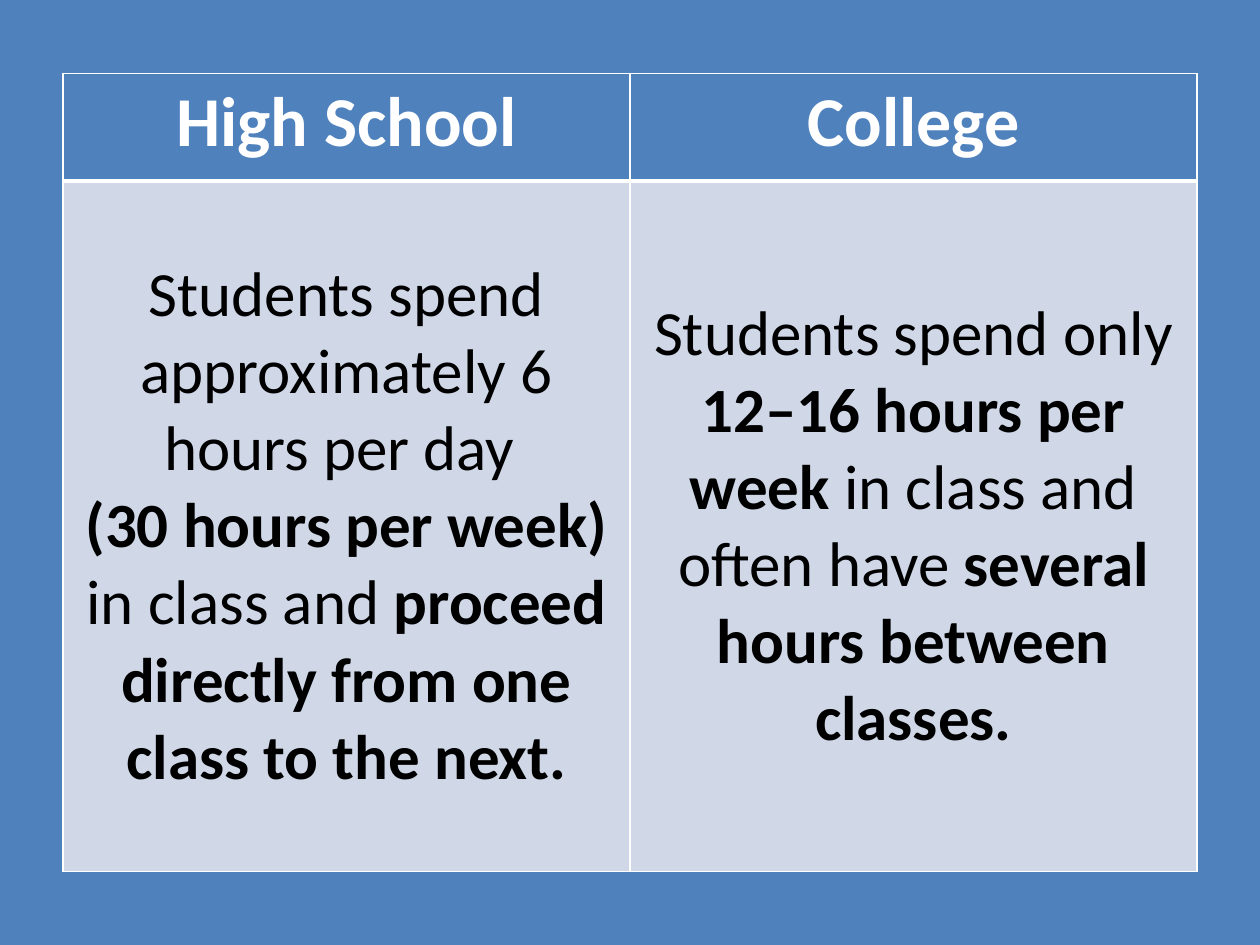
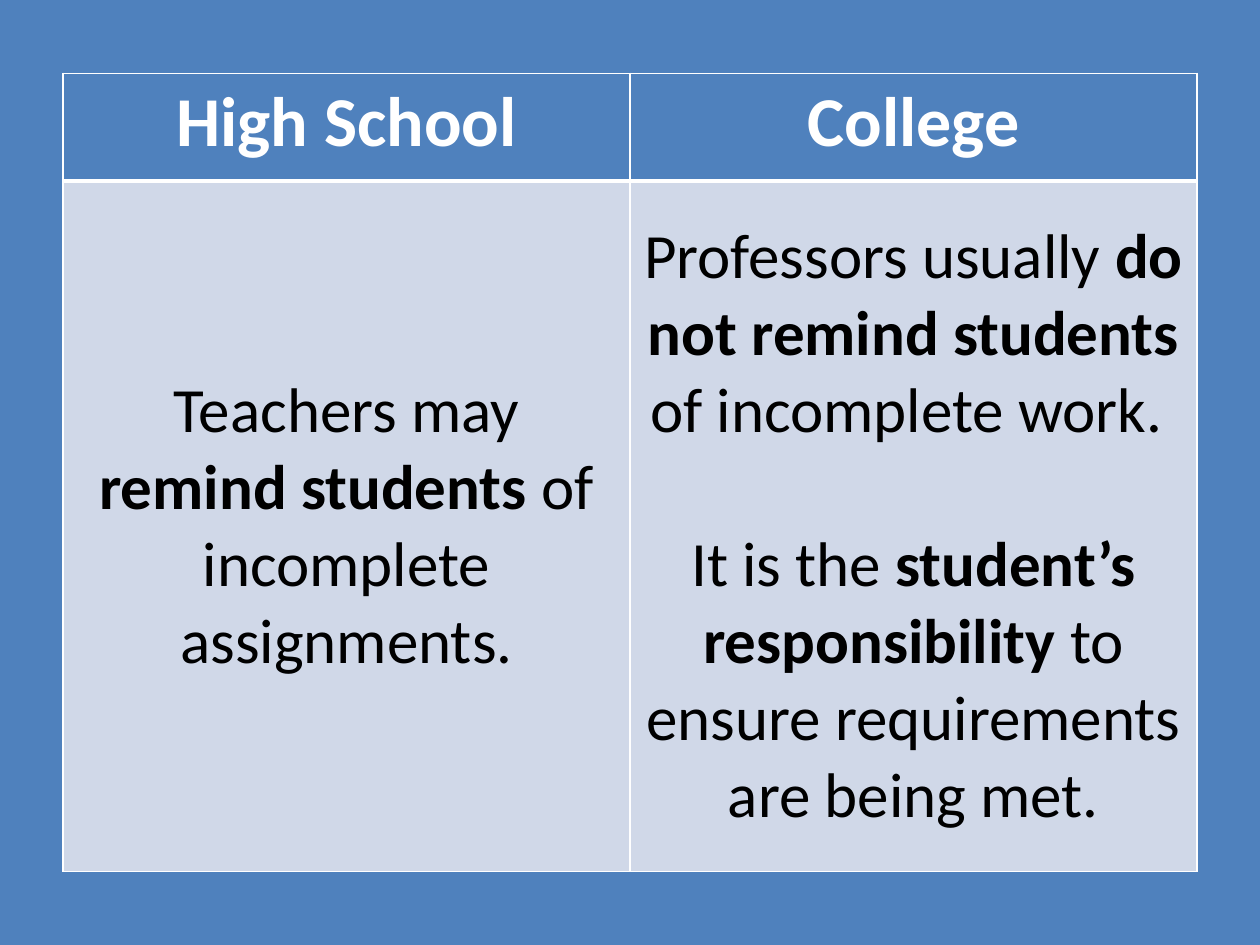
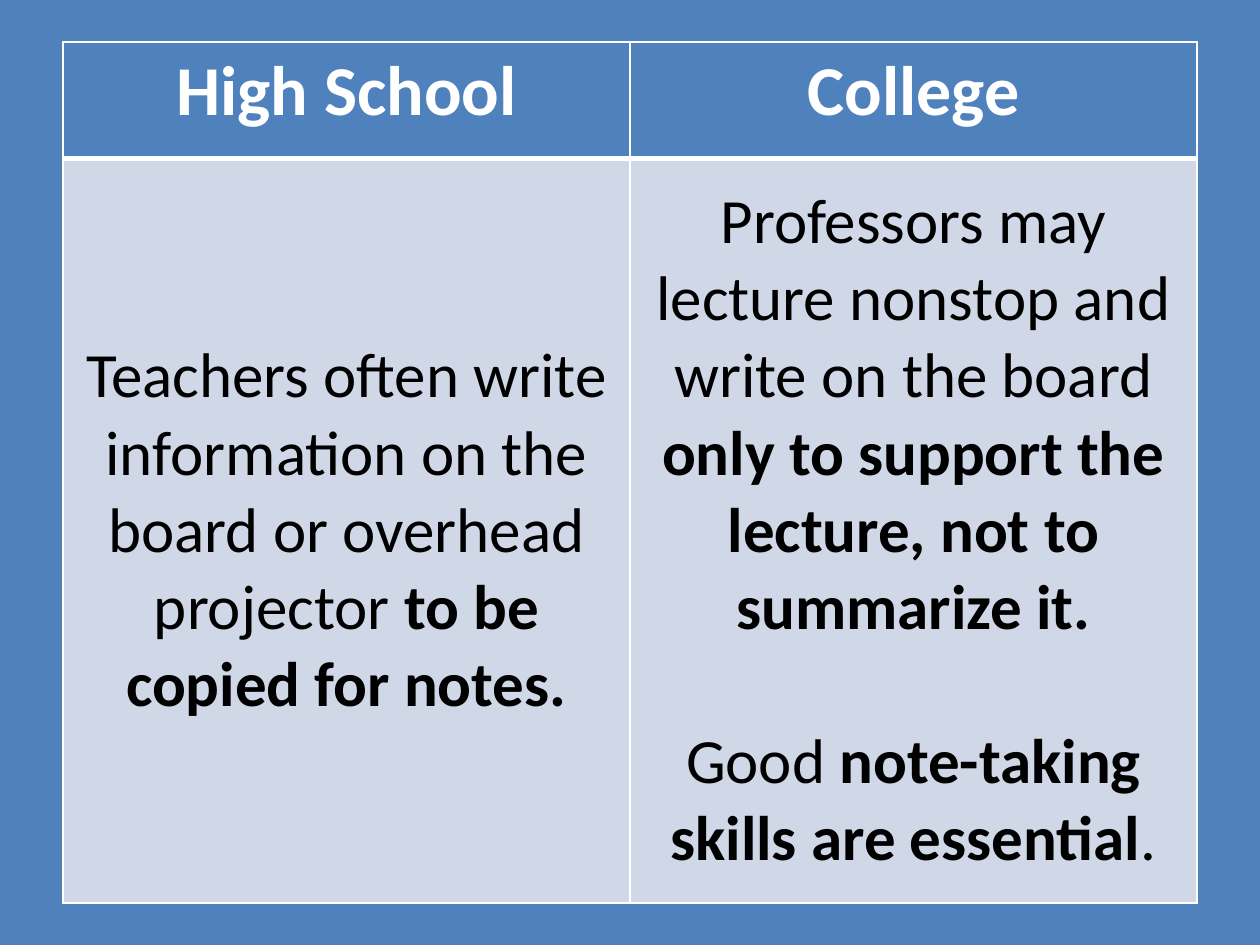
from dataclasses import dataclass

from lxml import etree
from pptx import Presentation
from pptx.dml.color import RGBColor
from pptx.enum.text import MSO_ANCHOR, PP_ALIGN
from pptx.oxml.ns import qn
from pptx.util import Cm, Pt

CENTER = PP_ALIGN.CENTER
TOP, MIDDLE = MSO_ANCHOR.TOP, MSO_ANCHOR.MIDDLE


@dataclass(frozen=True)
class Theme:
    font: str = "Calibri"
    blue: str = "4F81BD"
    pale: str = "D0D8E8"
    white: str = "FFFFFF"
    black: str = "000000"
    header_size: int = 40
    body_size: int = 36
    paragraph_gap: int = 44
    thin_line: int = 1
    thick_line: int = 3


THEME = Theme()
SLIDE_WIDTH, SLIDE_HEIGHT = Cm(25.4), Cm(19.05)
TABLE_WIDTH = Cm(22.86)
HEADER_SHARE = 0.135
HEADINGS = ("High School", "College")

# Each slide: table height, then the paragraphs of both columns; ** marks bold.
COMPARISONS = (
    (Cm(16.09), (
        ("Students spend approximately 6 hours per day ",
         "**(30 hours per week)** in class and "
         "**proceed directly from one class to the next.**"),
        ("Students spend only **12–16 hours per week** in class and often have "
         "**several hours between classes.**",),
    )),
    (Cm(16.09), (
        ("Teachers may **remind students **of incomplete assignments.",),
        ("Professors usually **do not remind students **of incomplete work. ",
         "It is the **student’s responsibility **to ensure requirements "
         "are being met."),
    )),
    (Cm(17.35), (
        ("Teachers often write information on the board or overhead projector "
         "**to be copied for notes.**",),
        ("Professors may lecture nonstop and write on the board "
         "**only to support the lecture, not to summarize it.**",
         "Good **note-taking skills are essential**."),
    )),
)


def set_borders(cell, **widths):
    """Draw white borders; widths are points keyed by side letter, in L, R, T, B order."""
    properties = cell._tc.get_or_add_tcPr()
    for side, width in widths.items():
        line = etree.SubElement(properties, qn(f"a:ln{side}"), w=str(Pt(width)))
        fill = etree.SubElement(line, qn("a:solidFill"))
        etree.SubElement(fill, qn("a:srgbClr"), val=THEME.white)


def add_marked_runs(paragraph, marked_text, size, color):
    """Split the text at ** so that every second part is bold."""
    paragraph.alignment = CENTER
    for index, part in enumerate(marked_text.split("**")):
        if not part:
            continue
        run = paragraph.add_run()
        run.text = part
        run.font.name = THEME.font
        run.font.size = Pt(size)
        run.font.bold = index % 2 == 1
        run.font.color.rgb = RGBColor.from_string(color)


def fill_cell(cell, paragraphs, fill, size, color, anchor):
    cell.fill.solid()
    cell.fill.fore_color.rgb = RGBColor.from_string(fill)
    cell.vertical_anchor = anchor
    text_frame = cell.text_frame
    for index, marked_text in enumerate(paragraphs):
        paragraph = text_frame.add_paragraph() if index else text_frame.paragraphs[0]
        add_marked_runs(paragraph, marked_text, size, color)


def add_comparison_table(slide, left, top, width, height, columns):
    table = slide.shapes.add_table(2, len(columns), left, top, width, height).table
    table.horz_banding = False
    header_height = round(height * HEADER_SHARE)
    table.rows[0].height = header_height
    table.rows[1].height = height - header_height

    thin, thick = THEME.thin_line, THEME.thick_line
    for index, (heading, paragraphs) in enumerate(zip(HEADINGS, columns)):
        header, body = table.cell(0, index), table.cell(1, index)
        set_borders(header, L=thin, R=thin, T=thin, B=thick)
        set_borders(body, L=thin, R=thin, T=thick, B=thin)
        fill_cell(header, [f"**{heading}**"], THEME.blue,
                  THEME.header_size, THEME.white, TOP)
        fill_cell(body, paragraphs, THEME.pale,
                  THEME.body_size, THEME.black, MIDDLE)
    return table


def separate_paragraphs(cell):
    """Leave one line of space before each paragraph that starts a new statement."""
    paragraphs = cell.text_frame.paragraphs
    for previous, paragraph in zip(paragraphs, paragraphs[1:]):
        if previous.text.rstrip().endswith("."):
            paragraph.space_before = Pt(THEME.paragraph_gap)


def add_comparison_slide(presentation, table_height, columns):
    slide = presentation.slides.add_slide(presentation.slide_layouts[6])
    background = slide.background.fill
    background.solid()
    background.fore_color.rgb = RGBColor.from_string(THEME.blue)
    left = (SLIDE_WIDTH - TABLE_WIDTH) // 2
    top = (SLIDE_HEIGHT - table_height) // 2
    table = add_comparison_table(slide, left, top, TABLE_WIDTH, table_height, columns)
    for cell in table.rows[1].cells:
        separate_paragraphs(cell)


def main():
    presentation = Presentation()
    presentation.slide_width = SLIDE_WIDTH
    presentation.slide_height = SLIDE_HEIGHT
    for table_height, columns in COMPARISONS:
        add_comparison_slide(presentation, table_height, columns)
    presentation.save("out.pptx")


if __name__ == "__main__":
    main()
